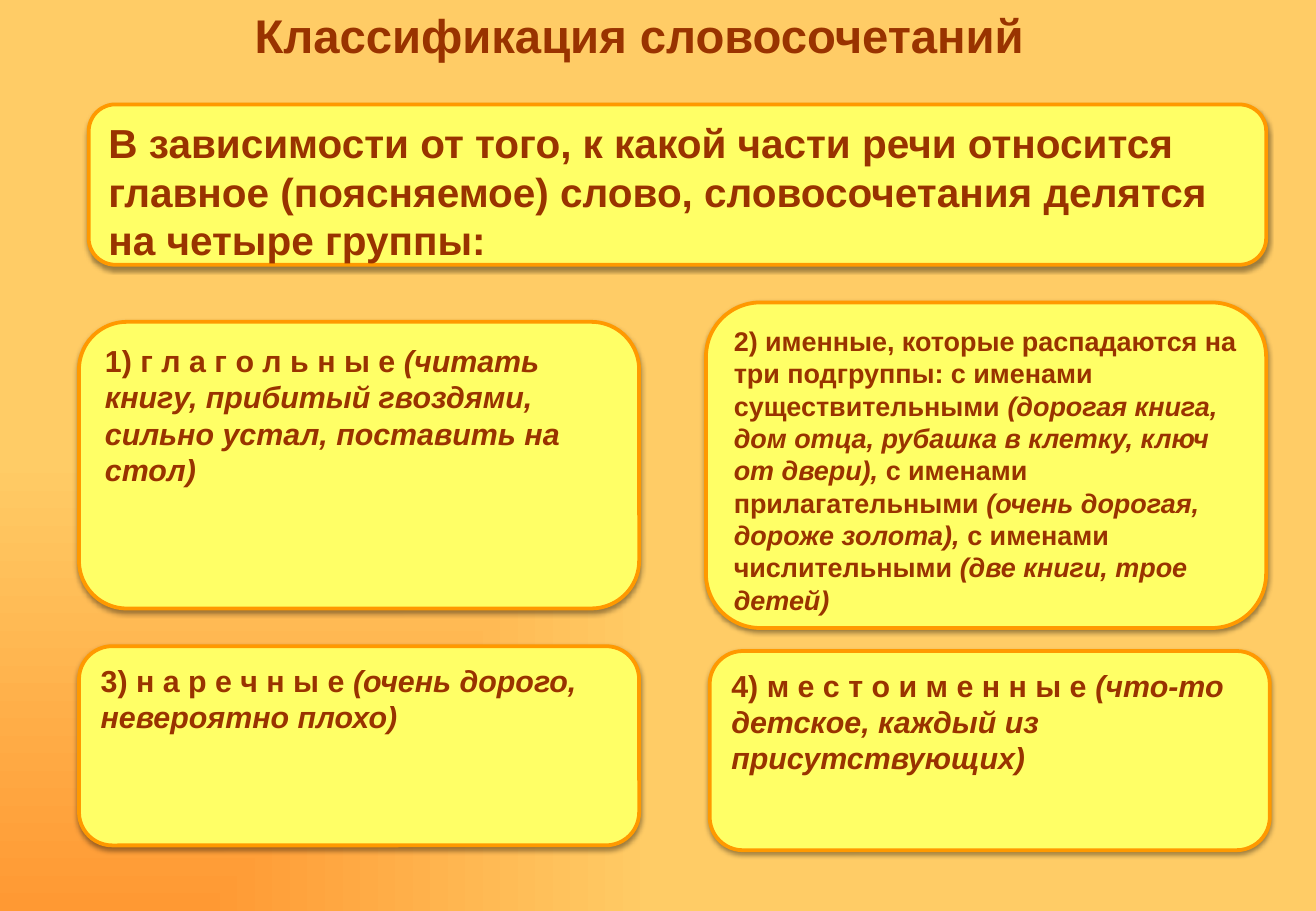
"""Build a slide that classifies Russian word combinations into four groups."""
from lxml import etree
from pptx import Presentation
from pptx.dml.color import RGBColor
from pptx.enum import shapes, text
from pptx.oxml import ns
from pptx.util import Inches, Pt

TITLE = "Классификация словосочетаний"
INTRO = ["В зависимости от того, к какой части речи относится главное "
         "(поясняемое) слово, словосочетания делятся на четыре группы:"]
VERBAL = ["1) г л а г о л ь н ы е ",
          "(читать книгу, прибитый гвоздями, сильно устал, поставить на стол)"]
NOMINAL = ["2) именные, которые распадаются на три подгруппы: с именами существительными ",
           "(дорогая книга, дом отца, рубашка в клетку, ключ от двери),",
           " с именами прилагательными ",
           "(очень дорогая, дороже золота),",
           " с именами числительными ",
           "(две книги, трое детей)"]
ADVERBIAL = ["3) н а р е ч н ы е ", "(очень дорого, невероятно плохо)"]
PRONOMINAL = ["4) м е с т о и м е н н ы е ", "(что-то детское, каждый из присутствующих)"]

GROUP_WIDTH = 4.61
PANELS = [
    (INTRO, 24, (0.73, 0.86, 9.69, 1.32)),
    (VERBAL, 18, (0.65, 2.65, GROUP_WIDTH, 2.36)),
    (NOMINAL, 16, (5.81, 2.49, GROUP_WIDTH, 2.68)),
    (ADVERBIAL, 18, (0.65, 5.32, GROUP_WIDTH, 1.64)),
    (PRONOMINAL, 18, (5.84, 5.36, GROUP_WIDTH, 1.64)),
]

BROWN = RGBColor(0x99, 0x33, 0x00)
YELLOW = RGBColor(0xFF, 0xFF, 0x66)
ORANGE = RGBColor(0xFF, 0x99, 0x00)
GLOW = RGBColor(0xFF, 0x99, 0x33)
SAND = RGBColor(0xFF, 0xCC, 0x66)


def set_all(target, values):
    """Set every attribute named in a dict of format values."""
    for name, value in values.items():
        setattr(target, name, value)


def add_node(parent, tag, **attributes):
    """Append a drawing element with the given attributes."""
    return etree.SubElement(parent, ns.qn(tag), {k: str(v) for k, v in attributes.items()})


def write_span(para, words, size, italic=False):
    """Add one run of bold brown text."""
    span = para.add_run()
    span.text = words
    set_all(span.font, {"name": "Arial", "size": Pt(size), "bold": True, "italic": italic})
    span.font.color.rgb = BROWN


def paint_background(page):
    """Spread a gradient from the bottom left corner."""
    fill = page.background.fill
    fill.gradient()
    for stop, color in zip(fill.gradient_stops, (GLOW, SAND)):
        stop.color.rgb = color
    linear = next(page.element.iter(ns.qn("a:lin")))
    gradient = linear.getparent()
    gradient.remove(linear)
    spread = add_node(gradient, "a:path", path="rect")
    add_node(spread, "a:fillToRect", t=100000, r=100000)


def add_shadow(box):
    """Give a box a soft shadow below it."""
    box.shadow.inherit = False
    effects = box.element.spPr.find(ns.qn("a:effectLst"))
    shadow = add_node(effects, "a:outerShdw", blurRad=Pt(3.1), dist=Pt(1.6),
                      dir=5400000, rotWithShape=0)
    color = add_node(shadow, "a:srgbClr", val="000000")
    add_node(color, "a:alpha", val=38000)


def add_panel(page, words, size, place):
    """Draw a rounded panel whose every second span is italic."""
    box = page.shapes.add_shape(shapes.MSO_SHAPE.ROUNDED_RECTANGLE, *map(Inches, place))
    box.fill.solid()
    box.fill.fore_color.rgb = YELLOW
    box.line.color.rgb = ORANGE
    box.line.width = Pt(2.25)
    add_shadow(box)
    set_all(box.text_frame, {"word_wrap": True, "vertical_anchor": text.MSO_ANCHOR.TOP})
    para = box.text_frame.paragraphs[0]
    para.alignment = text.PP_ALIGN.LEFT
    for index, part in enumerate(words):
        write_span(para, part, size, italic=index % 2 == 1)


def main():
    """Build and save the deck."""
    deck = Presentation()
    set_all(deck, {"slide_width": Inches(10.83), "slide_height": Inches(7.5)})
    page = deck.slides.add_slide(deck.slide_layouts[5])
    paint_background(page)
    title = page.shapes.title
    set_all(title, {"left": Inches(0.73), "top": Inches(0),
                    "width": Inches(9.06), "height": Inches(0.57)})
    set_all(title.text_frame, {"word_wrap": True, "auto_size": text.MSO_AUTO_SIZE.NONE,
                               "vertical_anchor": text.MSO_ANCHOR.TOP})
    para = title.text_frame.paragraphs[0]
    para.alignment = text.PP_ALIGN.CENTER
    write_span(para, TITLE, 28)
    for panel in PANELS:
        add_panel(page, *panel)
    deck.save("out.pptx")


if __name__ == "__main__":
    main()
